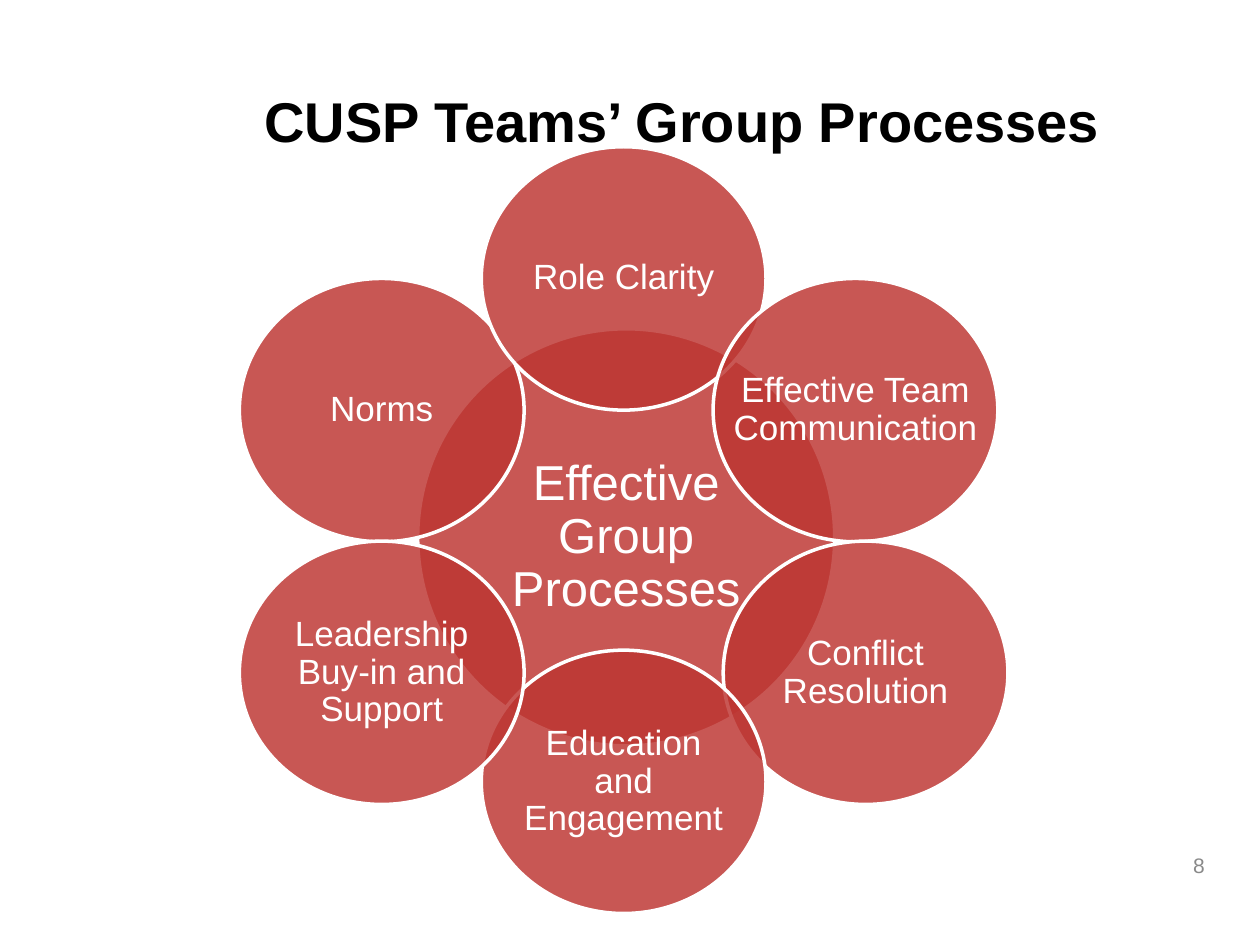
from lxml import etree
from pptx import Presentation
from pptx.dml.color import RGBColor
from pptx.enum.shapes import MSO_SHAPE
from pptx.enum.text import MSO_ANCHOR, PP_ALIGN
from pptx.oxml.ns import qn
from pptx.util import Inches, Pt

OVAL = MSO_SHAPE.OVAL
MIDDLE = MSO_ANCHOR.MIDDLE
CENTER, RIGHT = PP_ALIGN.CENTER, PP_ALIGN.RIGHT
COLORS = {"red": "BD3632", "white": "FFFFFF", "black": "000000", "gray": "898989"}
COLUMNS, ROWS = 100, 75
PETAL_SIZE = (22.6, 20.9)
HUB_SIZE = (33.1, 33.1)
LEFT, MID, RIGHT_HIGH, RIGHT_LOW = 30.3, 49.5, 67.9, 68.7
TOP, UPPER, LOWER, BOTTOM = 22.1, 32.55, 53.4, 62.05
PETALS = [
    (LEFT, UPPER, ["Norms"], True),
    (MID, TOP, ["Role Clarity"], True),
    (RIGHT_HIGH, UPPER, ["Effective Team", "Communication"], False),
    (RIGHT_LOW, LOWER, ["Conflict Resolution"], True),
    (MID, BOTTOM, ["Education", "and Engagement"], True),
    (LEFT, LOWER, ["Leadership", "Buy-in and Support"], True),
]


class SlideBuilder:
    font_name = "Arial"

    def __init__(self, deck):
        self.column = deck.slide_width / COLUMNS
        self.row = deck.slide_height / ROWS
        self.slide = deck.slides.add_slide(deck.slide_layouts[5])

    def place(self, left, top, width, height):
        return (round(left * self.column), round(top * self.row),
                round(width * self.column), round(height * self.row))

    def set_text(self, shape, lines, size, color, align=CENTER, bold=False,
                 spacing=1.0, wrap=True):
        frame = shape.text_frame
        frame.word_wrap = wrap
        frame.vertical_anchor = MIDDLE
        frame.text = "\n".join(lines)
        for para in frame.paragraphs:
            para.alignment = align
            para.line_spacing = spacing
            para.space_before = para.space_after = Pt(0)
            para.font.name = self.font_name
            para.font.size = Pt(size)
            para.font.bold = bold
            para.font.color.rgb = RGBColor.from_string(COLORS[color])

    def title(self, text, area):
        title = self.slide.shapes.title
        title.left, title.top, title.width, title.height = self.place(*area)
        self.set_text(title, [text], 32, "black", bold=True)

    def page_number(self, text, area):
        box = self.slide.shapes.add_textbox(*self.place(*area))
        self.set_text(box, [text], 12, "gray", align=RIGHT)

    def circle(self, x, y, size, lines, font_size, wrap=True):
        width, height = size
        area = self.place(x - width / 2, y - height / 2, width, height)
        circle = self.slide.shapes.add_shape(OVAL, *area)
        circle.shadow.inherit = False
        circle.fill.solid()
        circle.fill.fore_color.rgb = RGBColor.from_string(COLORS["red"])
        color = circle.element.spPr.find(qn("a:solidFill"))[0]
        etree.SubElement(color, qn("a:alpha"), val="83000")
        circle.line.color.rgb = RGBColor.from_string(COLORS["white"])
        circle.line.width = Pt(2)
        frame = circle.text_frame
        frame.margin_left = frame.margin_right = 0
        frame.margin_top = frame.margin_bottom = 0
        self.set_text(circle, lines, font_size, "white", spacing=0.9, wrap=wrap)


def main():
    deck = Presentation()
    deck.slide_width, deck.slide_height = Inches(10), Inches(7.5)
    page = SlideBuilder(deck)
    page.title("CUSP Teams’ Group Processes", (8.3, 5.8, 91.7, 7.5))
    page.page_number("8", (73.3, 66.7, 23.3, 4))
    page.circle(49.7, 42.65, HUB_SIZE, ["Effective Group Processes"], 28)
    for x, y, lines, wrap in PETALS:
        page.circle(x, y, PETAL_SIZE, lines, 20, wrap)
    deck.save("out.pptx")


if __name__ == "__main__":
    main()
